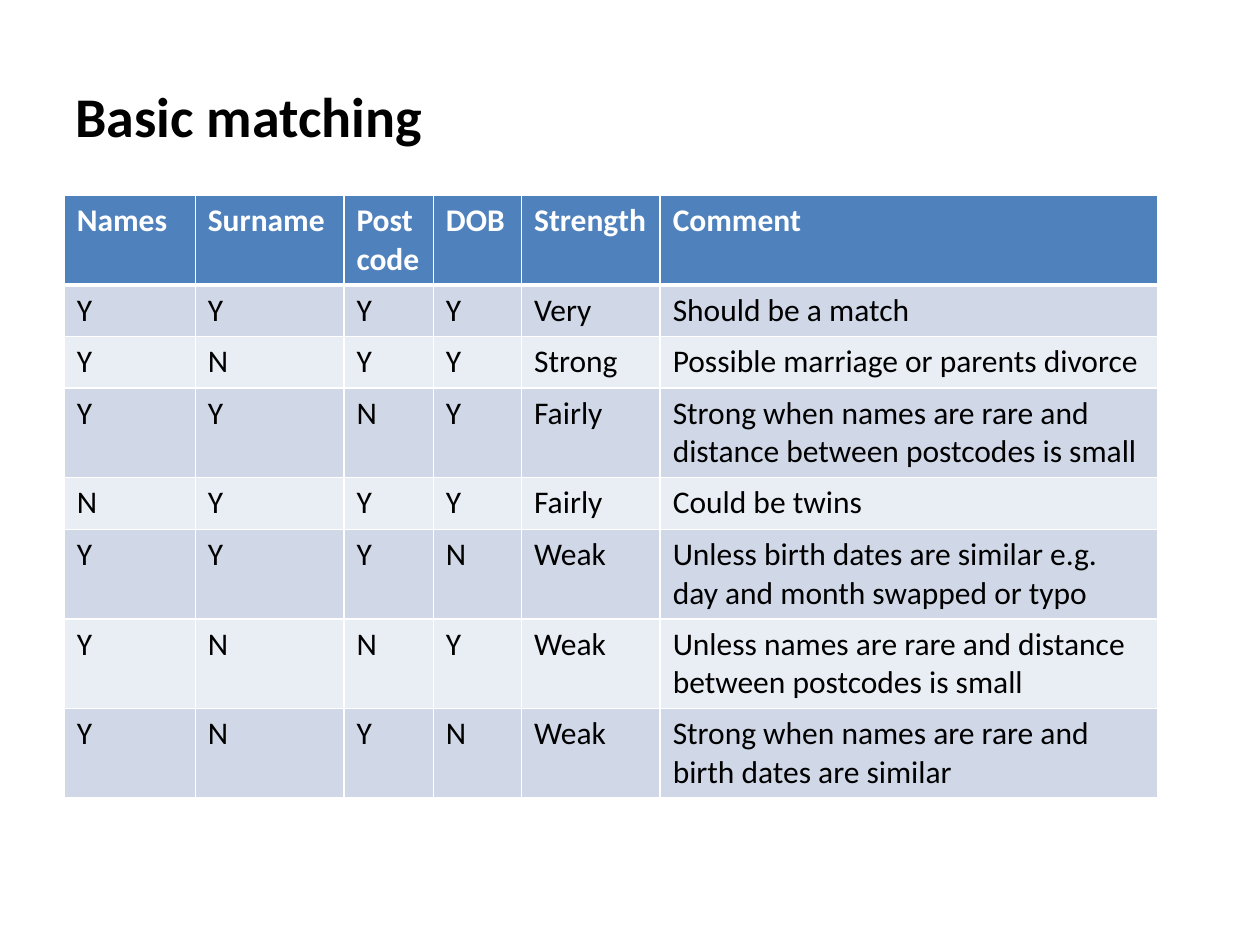
"""Build a slide with a table of basic record-matching rules."""
from dataclasses import dataclass

from lxml.etree import SubElement
from pptx import Presentation
from pptx.dml.color import RGBColor
from pptx.enum.text import MSO_ANCHOR, PP_ALIGN
from pptx.oxml.ns import qn
from pptx.util import Inches, Pt

COLORS = {
    "header": "4F81BD",
    "band_dark": "D0D8E8",
    "band_light": "E9EDF4",
    "white": "FFFFFF",
    "black": "000000",
}
FONT = "Calibri"
COLUMN_WIDTHS = (1.04, 1.18, 0.71, 0.7, 1.1, 3.95)
HEADER_HEIGHT, BODY_HEIGHT = 0.45, 0.41
TABLE_LEFT, TABLE_TOP, TABLE_HEIGHT = 0.51, 1.55, 4.72
THIN, THICK = Pt(1), Pt(3)
HEADINGS = ("Names", "Surname", "Postcode", "DOB", "Strength", "Comment")


@dataclass(frozen=True)
class MatchRule:
    """One combination of agreeing fields and its meaning."""

    flags: str
    strength: str
    comment: str

    def values(self) -> tuple:
        """Return the cell texts of the rule."""
        return (*self.flags, self.strength, self.comment)


RULES = (
    MatchRule("YYYY", "Very", "Should be a match"),
    MatchRule("YNYY", "Strong", "Possible marriage or parents divorce"),
    MatchRule("YYNY", "Fairly", "Strong when names are rare and distance between postcodes is small"),
    MatchRule("NYYY", "Fairly", "Could be twins"),
    MatchRule("YYYN", "Weak", "Unless birth dates are similar e.g. day and month swapped or typo"),
    MatchRule("YNNY", "Weak", "Unless names are rare and distance between postcodes is small"),
    MatchRule("YNYN", "Weak", "Strong when names are rare and birth dates are similar"),
)


def style_font(paragraph, size: int, bold: bool, color: str) -> None:
    """Set the font of a whole paragraph."""
    font = paragraph.font
    font.name, font.size, font.bold = FONT, Pt(size), bold
    font.color.rgb = RGBColor.from_string(COLORS[color])


def add_borders(cell, top: int, bottom: int) -> None:
    """Draw white lines on the four sides of a cell."""
    properties = cell._tc.get_or_add_tcPr()
    for side, width in (("L", THIN), ("R", THIN), ("T", top), ("B", bottom)):
        line = SubElement(properties, qn(f"a:ln{side}"), w=str(int(width)))
        fill = SubElement(line, qn("a:solidFill"))
        SubElement(fill, qn("a:srgbClr"), val=COLORS["white"])


def fill_cell(cell, text: str, row: int) -> None:
    """Write and format a cell according to its row."""
    is_header = row == 0
    band = "header" if is_header else "band_dark" if row % 2 else "band_light"
    add_borders(cell, THICK if row == 1 else THIN, THICK if is_header else THIN)
    cell.fill.solid()
    cell.fill.fore_color.rgb = RGBColor.from_string(COLORS[band])
    cell.text = text
    style_font(cell.text_frame.paragraphs[0], 18, is_header, "white" if is_header else "black")


def add_title(slide, text: str) -> None:
    """Place and format the title placeholder."""
    title = slide.shapes.title
    title.left, title.top = Inches(0.5), Inches(0.6)
    title.width, title.height = Inches(9), Inches(1.02)
    title.text_frame.text = text
    title.text_frame.vertical_anchor = MSO_ANCHOR.TOP
    paragraph = title.text_frame.paragraphs[0]
    paragraph.alignment = PP_ALIGN.LEFT
    style_font(paragraph, 32, True, "black")


def add_rule_table(slide) -> None:
    """Add the table with its heading row and one row per rule."""
    rows = (HEADINGS, *(rule.values() for rule in RULES))
    frame = slide.shapes.add_table(
        len(rows), len(HEADINGS), Inches(TABLE_LEFT), Inches(TABLE_TOP),
        Inches(sum(COLUMN_WIDTHS)), Inches(TABLE_HEIGHT),
    )
    table = frame.table
    for column, width in zip(table.columns, COLUMN_WIDTHS):
        column.width = Inches(width)
    for index, values in enumerate(rows):
        table.rows[index].height = Inches(BODY_HEIGHT if index else HEADER_HEIGHT)
        for column_index, text in enumerate(values):
            fill_cell(table.cell(index, column_index), text, index)
    frame.height = Inches(TABLE_HEIGHT)


def main() -> None:
    """Create and save the presentation."""
    presentation = Presentation()
    presentation.slide_width, presentation.slide_height = Inches(10), Inches(7.5)
    slide = presentation.slides.add_slide(presentation.slide_layouts[5])
    add_title(slide, "Basic matching")
    add_rule_table(slide)
    presentation.save("out.pptx")


if __name__ == "__main__":
    main()
